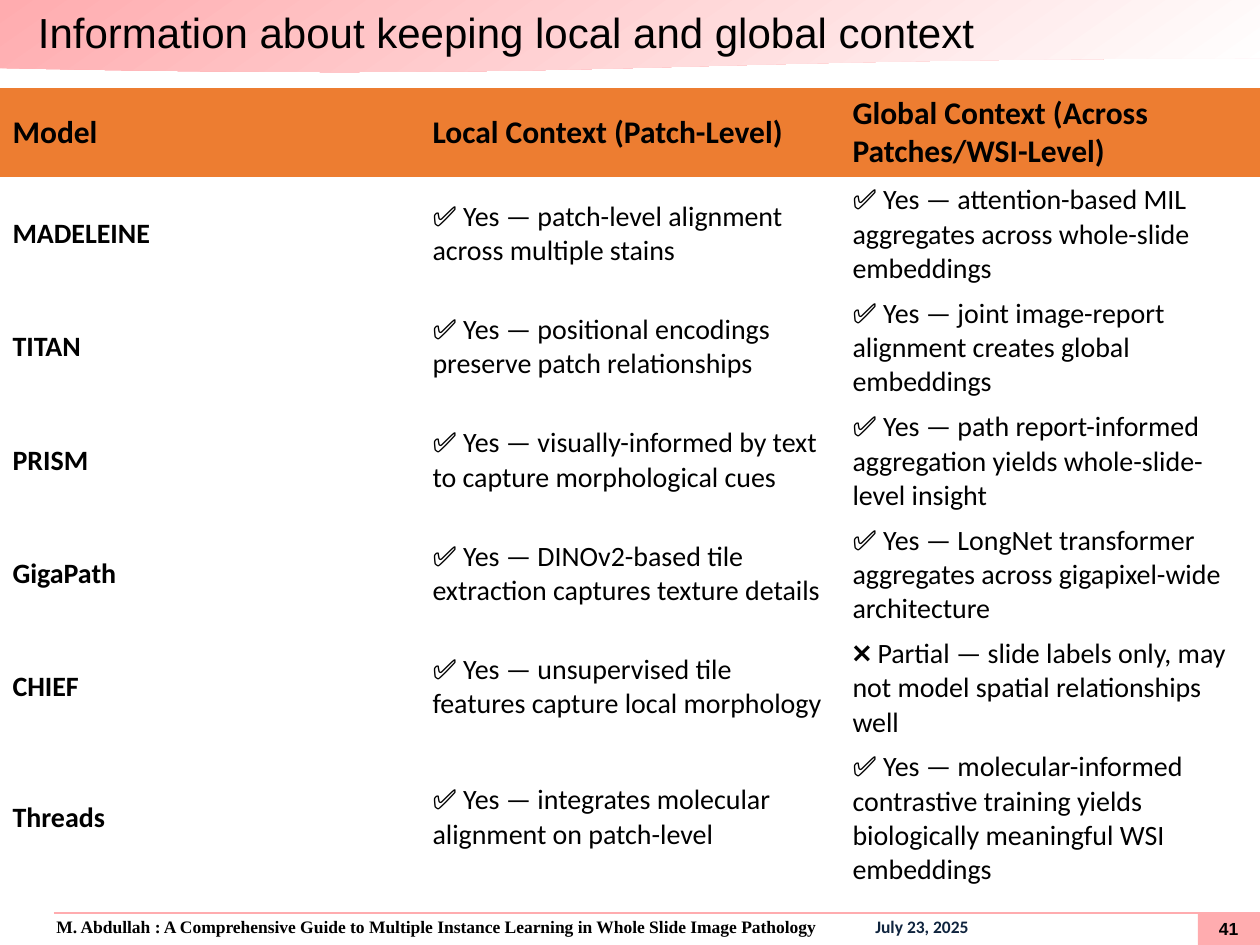
from pptx import Presentation
from pptx.dml.color import RGBColor
from pptx.enum.shapes import MSO_CONNECTOR, MSO_SHAPE
from pptx.enum.text import MSO_ANCHOR
from pptx.oxml.ns import qn
from pptx.util import Pt
from lxml.etree import SubElement

SCALE = 914400 / 126
WIDTH, HEIGHT = 1260, 945
PINK, WHITE, BLACK, ORANGE, NAVY = "FFACAF", "FFFFFF", "000000", "ED7D31", "0F243E"
NO_STYLE = "{2D5ABB26-0587-4C30-8999-92F81FD0307C}"

TITLE = "Information about keeping local and global context"
FOOTER = ("M. Abdullah : A Comprehensive Guide to\u00a0Multiple Instance Learning\u00a0"
          "in Whole Slide\u00a0Image\u00a0Pathology")
DATE = "July 23, 2025"
PAGE = "41"

HEADER = ("Model", "Local Context (Patch-Level)", "Global Context (Across Patches/WSI-Level)")
MODELS = [
    ("MADELEINE", "✅ Yes — patch-level alignment across multiple stains",
     "✅ Yes — attention-based MIL aggregates across whole-slide embeddings"),
    ("TITAN", "✅ Yes — positional encodings preserve patch relationships",
     "✅ Yes — joint image-report alignment creates global embeddings"),
    ("PRISM", "✅ Yes — visually-informed by text to capture morphological cues",
     "✅ Yes — path report-informed aggregation yields whole-slide-level insight"),
    ("GigaPath", "✅ Yes — DINOv2-based tile extraction captures texture details",
     "✅ Yes — LongNet transformer aggregates across gigapixel-wide architecture"),
    ("CHIEF", "✅ Yes — unsupervised tile features capture local morphology",
     "❌ Partial — slide labels only, may not model spatial relationships well"),
    ("Threads", "✅ Yes — integrates molecular alignment on patch-level",
     "✅ Yes — molecular-informed contrastive training yields biologically "
     "meaningful WSI embeddings"),
]
ROW_HEIGHTS = [89] + [113] * 5 + [147]


def px(length):
    return round(length * SCALE)


def rgb(color):
    return RGBColor.from_string(color)


def style_run(run, font, size, color=BLACK, bold=False):
    run.font.name = font
    run.font.size = Pt(size)
    run.font.bold = bold
    run.font.color.rgb = rgb(color)


def add_band(slide, kind, *box):
    """Add a pink preset shape without outline or shadow."""
    shape = slide.shapes.add_shape(kind, *map(px, box))
    shape.shadow.inherit = False
    shape.fill.solid()
    shape.fill.fore_color.rgb = rgb(PINK)
    shape.line.fill.background()
    return shape


def add_text(slide, box, text, size, font="Arial", bold=False, left_inset=0, wrap=True):
    """Add a one-line box, centred vertically, with no inset but the left one."""
    frame = slide.shapes.add_textbox(*map(px, box)).text_frame
    frame.word_wrap = wrap
    frame.vertical_anchor = MSO_ANCHOR.MIDDLE
    frame.margin_left = px(left_inset)
    frame.margin_top = frame.margin_right = frame.margin_bottom = 0
    frame.text = text
    style_run(frame.paragraphs[0].runs[0], font, size, bold=bold)


def add_header_band(slide):
    band = add_band(slide, MSO_SHAPE.FLOWCHART_DOCUMENT, 0, 0, 1261, 73)
    band.fill.gradient()
    band.fill.gradient_angle = 305
    for stop, color, position in zip(band.fill.gradient_stops, (PINK, WHITE), (0, 1)):
        stop.color.rgb = rgb(color)
        stop.position = position


def add_footer(slide):
    add_band(slide, MSO_SHAPE.RECTANGLE, 1198, 912, 63, 33)
    frame = slide.shapes.add_textbox(px(5), px(911), px(1256), px(33)).text_frame
    frame.word_wrap = True
    paragraph = frame.paragraphs[0]
    paragraph.line_spacing = 0.95
    properties = paragraph._p.get_or_add_pPr()
    properties.set("marL", str(px(39)))
    properties.set("indent", "0")
    for text, font, color in ((FOOTER, "Times New Roman", BLACK),
                              ("\t" + DATE, "Calibri", NAVY)):
        run = paragraph.add_run()
        run.text = text
        style_run(run, font, 10, color, bold=True)

    rule = slide.shapes.add_connector(
        MSO_CONNECTOR.STRAIGHT, px(54), px(913), px(WIDTH), px(913))
    rule.line.color.rgb = rgb(PINK)
    rule.line.width = Pt(1.5)
    SubElement(rule._element.spPr, qn("a:effectLst"))
    add_text(slide, (1219, 917, 36, 22), PAGE, 10, bold=True)


def add_context_table(slide):
    rows = [HEADER] + MODELS
    table = slide.shapes.add_table(
        len(rows), len(HEADER), 0, px(88), px(WIDTH), px(sum(ROW_HEIGHTS))).table
    table.horz_banding = False
    table._tbl.tblPr.find(qn("a:tableStyleId")).text = NO_STYLE
    for column in table.columns:
        column.width = px(WIDTH / len(HEADER))
    for row_index, (texts, height) in enumerate(zip(rows, ROW_HEIGHTS)):
        is_header = row_index == 0
        table.rows[row_index].height = px(height)
        for column_index, text in enumerate(texts):
            cell = table.cell(row_index, column_index)
            cell.vertical_anchor = MSO_ANCHOR.MIDDLE
            if is_header:
                cell.fill.solid()
                cell.fill.fore_color.rgb = rgb(ORANGE)
            else:
                cell.fill.background()
            cell.text_frame.text = text
            style_run(cell.text_frame.paragraphs[0].runs[0], "Calibri",
                      18 if is_header else 16, bold=is_header or column_index == 0)


def main():
    presentation = Presentation()
    presentation.slide_width, presentation.slide_height = px(WIDTH), px(HEIGHT)
    slide = presentation.slides.add_slide(presentation.slide_layouts[6])
    add_header_band(slide)
    add_footer(slide)
    add_text(slide, (0, 0, WIDTH, 63), TITLE, 24, left_inset=38, wrap=False)
    add_context_table(slide)
    presentation.save("out.pptx")


if __name__ == "__main__":
    main()
